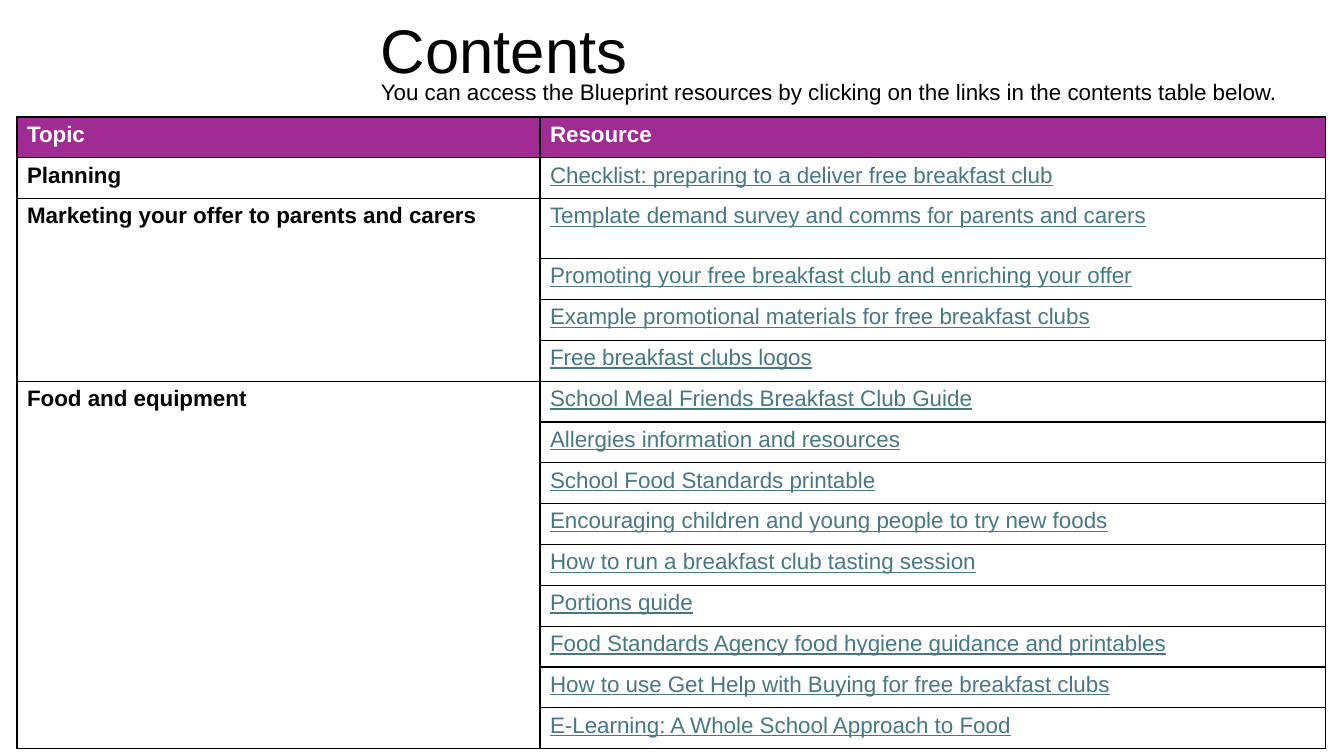
from pptx import Presentation
from pptx.dml.color import RGBColor
from pptx.enum.text import MSO_ANCHOR as Anchor
from pptx.oxml import parse_xml
from pptx.oxml.ns import nsdecls
from pptx.util import Pt

TITLE = "Contents"
INTRO = "You can access the Blueprint resources by clicking on the links in the contents table below."
HEADINGS = ("Topic", "Resource")
TOPICS = {
    "Planning": ["Checklist: preparing to a deliver free breakfast club"],
    "Marketing your offer to parents and carers": [
        "Template demand survey and comms for parents and carers",
        "Promoting your free breakfast club and enriching your offer",
        "Example promotional materials for free breakfast clubs",
        "Free breakfast clubs logos",
    ],
    "Food and equipment": [
        "School Meal Friends Breakfast Club Guide",
        "Allergies information and resources",
        "School Food Standards printable",
        "Encouraging children and young people to try new foods",
        "How to run a breakfast club tasting session",
        "Portions guide",
        "Food Standards Agency food hygiene guidance and printables",
        "How to use Get Help with Buying for free breakfast clubs",
        "E-Learning: A Whole School Approach to Food",
    ],
}

THEME = {
    "font": "Arial",
    "title": Pt(44),
    "body": Pt(16),
    "border": Pt(1),
    "text": "000000",
    "header_text": "FFFFFF",
    "header_fill": "A02B93",
    "link": "467886",
    "line": "000000",
}
SCALE = 914400 / 100.8
SLIDE_SIZE = (1344, 756)
TITLE_BOX = (371, 10, 934, 88)
INTRO_BOX = (371, 73, 960, 37)
TABLE_BOX = (17, 117, 1309, 632)
TOPIC_WIDTH = 523
TALL_ROW, TALL_HEIGHT = 2, 60


def px(length):
    return round(length * SCALE)


def write(frame, text, size="body", color="text", **formats):
    para = frame.paragraphs[0]
    span = para.add_run()
    span.text = text
    for name, value in {"name": THEME["font"], "size": THEME[size], **formats}.items():
        setattr(span.font, name, value)
    span.font.color.rgb = RGBColor.from_string(THEME[color])
    return para


def add_text(page, bounds, text, anchor, size="body"):
    box = page.shapes.add_textbox(*map(px, bounds))
    box.text_frame.word_wrap = True
    box.text_frame.vertical_anchor = anchor
    return write(box.text_frame, text, size)


def style_cell(cell, fill=None):
    if fill:
        cell.fill.solid()
        cell.fill.fore_color.rgb = RGBColor.from_string(THEME[fill])
    else:
        cell.fill.background()
    properties = cell._tc.get_or_add_tcPr()
    for position, side in enumerate(("lnL", "lnR", "lnT", "lnB")):
        properties.insert(position, parse_xml(
            f'<a:{side} {nsdecls("a")} w="{THEME["border"]}"><a:solidFill>'
            f'<a:srgbClr val="{THEME["line"]}"/></a:solidFill></a:{side}>'))


def add_contents(page):
    row_count = 1 + sum(map(len, TOPICS.values()))
    table = page.shapes.add_table(row_count, 2, *map(px, TABLE_BOX)).table
    width, height = TABLE_BOX[2:]
    table.columns[0].width = px(TOPIC_WIDTH)
    table.columns[1].width = px(width - TOPIC_WIDTH)
    row_height = (height - TALL_HEIGHT) / (row_count - 1)
    for index, row in enumerate(table.rows):
        row.height = px(TALL_HEIGHT if index == TALL_ROW else row_height)
        for cell in row.cells:
            style_cell(cell, None if index else "header_fill")
    for column, heading in enumerate(HEADINGS):
        write(table.cell(0, column).text_frame, heading, color="header_text", bold=True)
    first = 1
    for topic, resources in TOPICS.items():
        topic_cell = table.cell(first, 0)
        if len(resources) > 1:
            topic_cell.merge(table.cell(first + len(resources) - 1, 0))
        write(topic_cell.text_frame, topic, bold=True)
        for index, resource in enumerate(resources, first):
            write(table.cell(index, 1).text_frame, resource,
                  color="link", bold=False, underline=True)
        first += len(resources)


def main():
    deck = Presentation()
    deck.slide_width, deck.slide_height = map(px, SLIDE_SIZE)
    page = deck.slides.add_slide(deck.slide_layouts[6])
    add_text(page, TITLE_BOX, TITLE, Anchor.MIDDLE, "title").line_spacing = 0.9
    add_contents(page)
    add_text(page, INTRO_BOX, INTRO, Anchor.TOP)
    deck.save("out.pptx")


if __name__ == "__main__":
    main()
